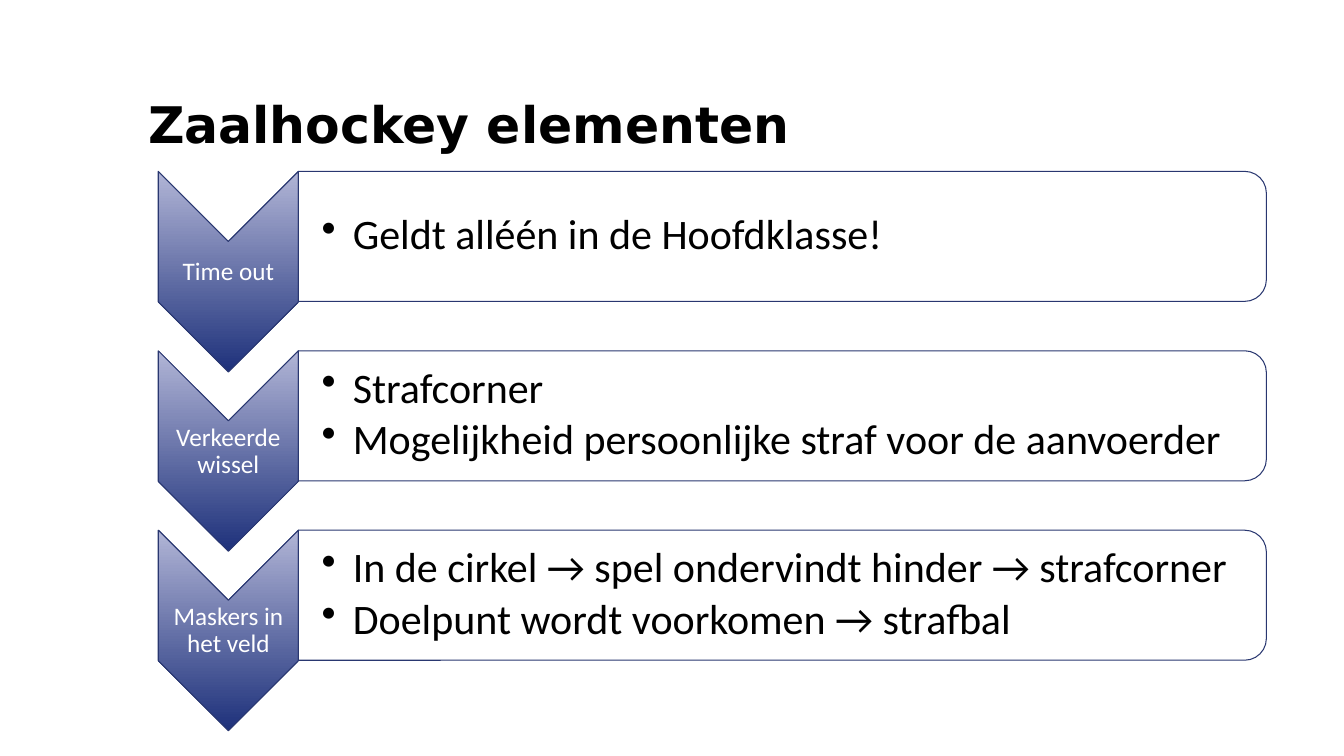
from lxml.etree import SubElement
from pptx import Presentation
from pptx.dml.color import RGBColor
from pptx.enum.shapes import MSO_SHAPE
from pptx.enum.text import MSO_ANCHOR, MSO_AUTO_SIZE, PP_ALIGN
from pptx.oxml.ns import qn
from pptx.util import Emu, Pt

TITLE = "Zaalhockey elementen"
ELEMENTS = [
    ("Time out", ["Geldt alléén in de Hoofdklasse!"]),
    ("Verkeerde wissel", ["Strafcorner", "Mogelijkheid persoonlijke straf voor de aanvoerder"]),
    ("Maskers in het veld", ["In de cirkel → spel ondervindt hinder → strafcorner",
                             "Doelpunt wordt voorkomen → strafbal"]),
]
COLORS = {"text": "000000", "label": "FFFFFF", "panel": "FFFFFF",
          "line": "293770", "dark": "1E317B", "light": "B1B5D6"}

PX = 9144  # 100 px to the inch
LEFT, TOP, ROW_STEP = 157, 170, 178
CHEVRON_WIDTH, CHEVRON_HEIGHT = 139, 199
PANEL_WIDTH, PANEL_HEIGHT = 960, 129
LABEL_OFFSET, LABEL_HEIGHT = 70, 60
BULLET_INDENT = 31


def px(value):
    return Emu(round(value * PX))


def color(name):
    return RGBColor.from_string(COLORS[name])


def add_turned_shape(kind, left, top, width, height):
    """Add a shape turned a quarter clockwise that covers the given area."""
    shift = (width - height) / 2
    shape = slide.shapes.add_shape(kind, px(left + shift), px(top - shift), px(height), px(width))
    shape.rotation = 90
    shape.shadow.inherit = False
    shape.line.color.rgb = color("line")
    shape.line.width = Pt(0.75)
    return shape


def set_frame(frame, left, other):
    frame.word_wrap = True
    frame.auto_size = MSO_AUTO_SIZE.NONE
    frame.vertical_anchor = MSO_ANCHOR.MIDDLE
    frame.margin_left = px(left)
    frame.margin_top = frame.margin_right = frame.margin_bottom = px(other)


def write(paragraph, text, font_name, size, color_name, align, space_after=0, bold=False):
    paragraph.alignment = align
    paragraph.line_spacing = 0.9
    paragraph.space_before = Pt(0)
    paragraph.space_after = Pt(space_after)
    run = paragraph.add_run()
    run.text = text
    run.font.name = font_name
    run.font.size = Pt(size)
    run.font.bold = bold
    run.font.color.rgb = color(color_name)


def add_bullet(paragraph):
    properties = paragraph._p.get_or_add_pPr()
    properties.set("marL", str(px(BULLET_INDENT)))
    properties.set("indent", str(-px(BULLET_INDENT)))
    SubElement(properties, qn("a:buChar")).set("char", "•")


def add_chevron(label, top):
    chevron = add_turned_shape(MSO_SHAPE.CHEVRON, LEFT, top, CHEVRON_WIDTH, CHEVRON_HEIGHT)
    chevron.fill.gradient()
    chevron.fill.gradient_angle = 90
    for stop, name in zip(chevron.fill.gradient_stops, ("dark", "light")):
        stop.color.rgb = color(name)
    chevron._element.spPr.find(qn("a:gradFill")).set("rotWithShape", "0")

    box = slide.shapes.add_textbox(px(LEFT), px(top + LABEL_OFFSET),
                                   px(CHEVRON_WIDTH), px(LABEL_HEIGHT))
    set_frame(box.text_frame, 1, 1)
    write(box.text_frame.paragraphs[0], label, "Calibri", 18, "label", PP_ALIGN.CENTER, 6)


def add_panel(bullets, top):
    left = LEFT + CHEVRON_WIDTH
    panel = add_turned_shape(MSO_SHAPE.ROUND_2_SAME_RECTANGLE, left, top,
                             PANEL_WIDTH, PANEL_HEIGHT)
    panel.fill.solid()
    panel.fill.fore_color.rgb = color("panel")
    fill_color = panel._element.spPr.find(qn("a:solidFill"))[0]
    SubElement(fill_color, qn("a:alpha")).set("val", "90000")

    box = slide.shapes.add_textbox(px(left), px(top + 6), px(PANEL_WIDTH - 6),
                                   px(PANEL_HEIGHT - 13))
    frame = box.text_frame
    set_frame(frame, 23, 2)
    for index, text in enumerate(bullets):
        paragraph = frame.add_paragraph() if index else frame.paragraphs[0]
        add_bullet(paragraph)
        write(paragraph, text, "Calibri", 30, "text", PP_ALIGN.LEFT, 4.5)


presentation = Presentation()
presentation.slide_width, presentation.slide_height = px(1333), px(750)
slide = presentation.slides.add_slide(presentation.slide_layouts[5])

title = slide.shapes.title
title.left, title.top, title.width, title.height = px(142), px(84), px(1050), px(85)
set_frame(title.text_frame, 5, 5)
write(title.text_frame.paragraphs[0], TITLE, "DejaVu Sans", 36, "text", PP_ALIGN.LEFT, bold=True)

for row, (label, bullets) in enumerate(ELEMENTS):
    row_top = TOP + row * ROW_STEP
    add_chevron(label, row_top)
    add_panel(bullets, row_top)

presentation.save("out.pptx")
